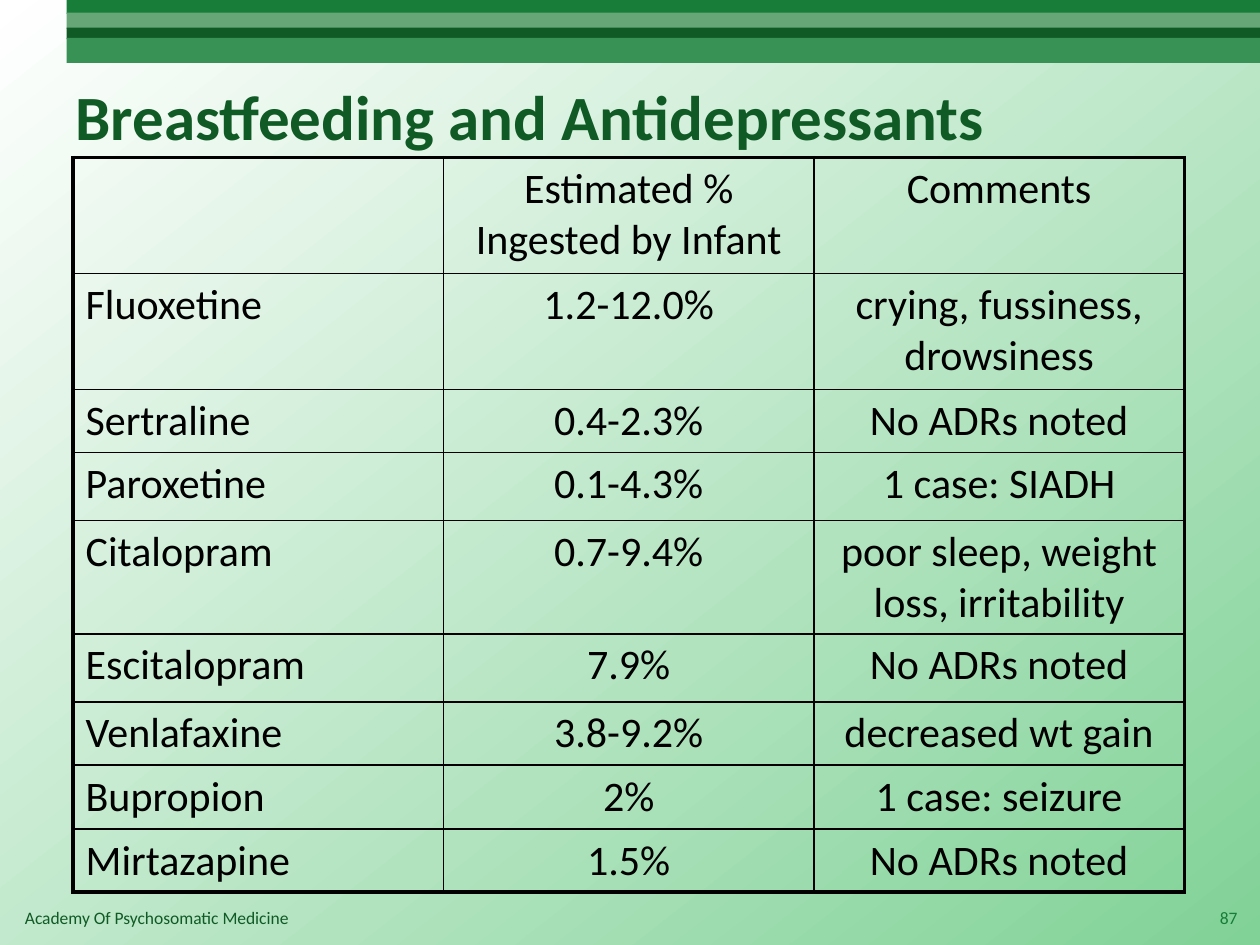
from pptx import Presentation
from pptx.dml.color import RGBColor
from pptx.enum.shapes import MSO_SHAPE
from pptx.enum.text import MSO_ANCHOR, PP_ALIGN
from pptx.oxml import parse_xml
from pptx.oxml.ns import nsdecls
from pptx.util import Inches, Pt

FONT = "Calibri"
WHITE = RGBColor(0xFF, 0xFF, 0xFF)
MINT = RGBColor(0x81, 0xD2, 0x97)
GREEN = RGBColor(0x17, 0x7D, 0x38)
PALE_GREEN = RGBColor(0x66, 0xA6, 0x77)
DARK_GREEN = RGBColor(0x10, 0x5A, 0x25)
MID_GREEN = RGBColor(0x38, 0x91, 0x55)
BLACK = RGBColor(0, 0, 0)

# Top and height of each band in the header
BANDS = [(0, 0.11, GREEN), (0.1, 0.13, PALE_GREEN),
         (0.22, 0.09, DARK_GREEN), (0.3, 0.2, MID_GREEN)]

ROWS = [
    ("", "Estimated % Ingested by Infant", "Comments"),
    ("Fluoxetine", "1.2-12.0%", "crying, fussiness, drowsiness"),
    ("Sertraline", "0.4-2.3%", "No ADRs noted"),
    ("Paroxetine", "0.1-4.3%", "1 case: SIADH"),
    ("Citalopram", "0.7-9.4%", "poor sleep, weight loss, irritability"),
    ("Escitalopram", "7.9%", "No ADRs noted"),
    ("Venlafaxine", "3.8-9.2%", "decreased wt gain"),
    ("Bupropion", "2%", "1 case: seizure"),
    ("Mirtazapine", "1.5%", "No ADRs noted"),
]
ROW_HEIGHTS = [0.92, 0.92, 0.49, 0.54, 0.87, 0.54, 0.49, 0.51, 0.49]
COL_WIDTH = 2.94
THIN, THICK = 1, 2.25


def write_text(tf, text, size=24, color=BLACK, bold=False,
               align=PP_ALIGN.LEFT, anchor=MSO_ANCHOR.TOP):
    tf.word_wrap = True
    tf.vertical_anchor = anchor
    p = tf.paragraphs[0]
    p.alignment = align
    r = p.add_run()
    r.text = text
    r.font.name = FONT
    r.font.size = Pt(size)
    r.font.bold = bold
    r.font.color.rgb = color


def add_text(slide, text, left, top, width, height, **fmt):
    box = slide.shapes.add_textbox(Inches(left), Inches(top),
                                   Inches(width), Inches(height))
    write_text(box.text_frame, text, **fmt)


def add_band(slide, top, height, color):
    s = slide.shapes.add_shape(MSO_SHAPE.RECTANGLE, Inches(0.53), Inches(top),
                               Inches(9.47), Inches(height))
    s.shadow.inherit = False
    s.fill.solid()
    s.fill.fore_color.rgb = color
    s.line.fill.background()


def set_borders(cell, **widths):
    tc_pr = cell._tc.get_or_add_tcPr()
    for i, side in enumerate("LRTB"):
        tc_pr.insert(i, parse_xml(
            f'<a:ln{side} {nsdecls("a")} w="{Pt(widths[side])}">'
            f'<a:solidFill><a:srgbClr val="{BLACK}"/></a:solidFill></a:ln{side}>'))


def add_drug_table(slide, left, top):
    n_rows, n_cols = len(ROWS), len(ROWS[0])
    table = slide.shapes.add_table(
        n_rows, n_cols, Inches(left), Inches(top),
        Inches(COL_WIDTH * n_cols), Inches(sum(ROW_HEIGHTS))).table
    table.first_row = table.horz_banding = False
    for col in table.columns:
        col.width = Inches(COL_WIDTH)
    for i, (texts, height) in enumerate(zip(ROWS, ROW_HEIGHTS)):
        table.rows[i].height = Inches(height)
        for j, text in enumerate(texts):
            cell = table.cell(i, j)
            cell.fill.background()
            if text:
                write_text(cell.text_frame, text,
                           align=PP_ALIGN.CENTER if j else PP_ALIGN.LEFT)
            # Thick outer frame, thin inner grid
            set_borders(cell,
                        L=THICK if j == 0 else THIN,
                        R=THICK if j == n_cols - 1 else THIN,
                        T=THICK if i == 0 else THIN,
                        B=THICK if i == n_rows - 1 else THIN)


def set_background(slide):
    fill = slide.background.fill
    fill.gradient()
    fill.gradient_angle = 360 - 52
    for stop, color in zip(fill.gradient_stops, (WHITE, MINT)):
        stop.color.rgb = color


def main():
    prs = Presentation()
    prs.slide_width, prs.slide_height = Inches(10), Inches(7.5)
    slide = prs.slides.add_slide(prs.slide_layouts[6])

    # Background and header bands
    set_background(slide)
    for band in BANDS:
        add_band(slide, *band)

    # Footer
    add_text(slide, "Academy Of Psychosomatic Medicine", 0.1, 7.15, 6.94, 0.27,
             size=10, color=DARK_GREEN)
    add_text(slide, "87", 9.52, 7.08, 0.4, 0.4, size=10, color=GREEN,
             align=PP_ALIGN.RIGHT, anchor=MSO_ANCHOR.MIDDLE)

    # Title and table
    add_text(slide, "Breastfeeding and Antidepressants", 0.5, 0.5, 9, 0.83,
             size=36, color=DARK_GREEN, bold=True, anchor=MSO_ANCHOR.MIDDLE)
    add_drug_table(slide, 0.58, 1.25)

    prs.save("out.pptx")


if __name__ == "__main__":
    main()
